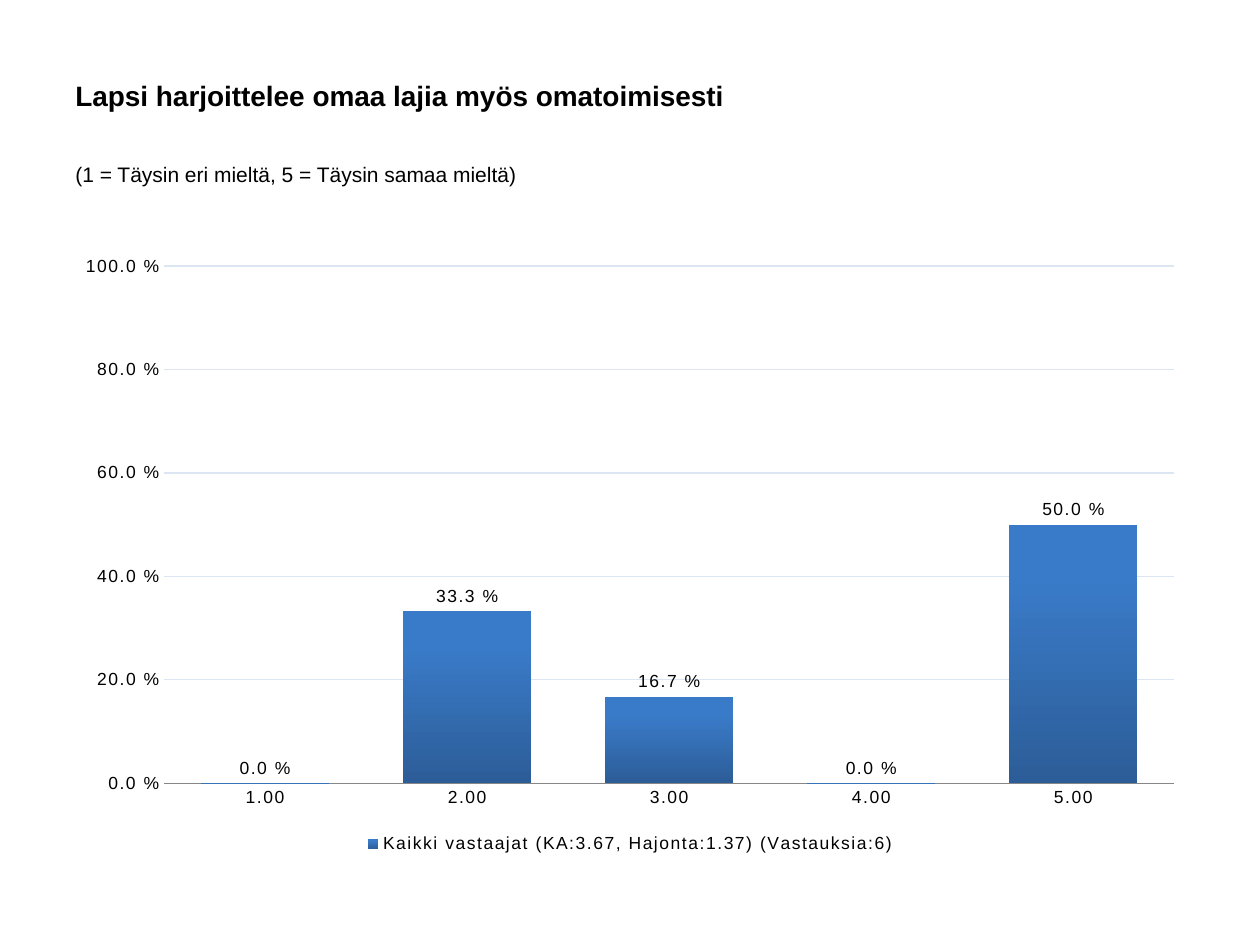
from lxml import etree
from pptx import Presentation, util as u
from pptx.chart.data import CategoryChartData
from pptx.dml.color import RGBColor
from pptx.enum import chart as ch, text
from pptx.oxml.ns import qn

PX = 914400 // 126
FONT = "Arial"
PERCENT = "0.0\\ %"
COLORS = {"text": "000000", "grid": "DCE6F2", "axis": "878787",
          "bar_bottom": "2C5D98", "bar_top": "3A7BC9"}


def px(n):
    return u.Emu(n * PX)


def rgb(name):
    return RGBColor.from_string(COLORS[name])


def set_font(font, size, bold=False):
    font.name, font.size, font.bold = FONT, u.Pt(size), bold
    font.color.rgb = rgb("text")


def add_text(s, box, words, size, bold=False, anchor=text.MSO_ANCHOR.TOP):
    tf = s.shapes.add_textbox(*map(px, box)).text_frame
    tf.word_wrap = True
    tf.vertical_anchor = anchor
    p = tf.paragraphs[0]
    p.text = words
    set_font(p.font, size, bold)
    return p


def set_plot_layout(chart, **fractions):
    """Fix the inner plot area as fractions of the chart box."""
    area = chart._chartSpace.chart.plotArea
    layout = area.find(qn("c:layout"))
    if layout is None:
        layout = etree.Element(qn("c:layout"))
        area.insert(0, layout)
    manual = etree.SubElement(layout, qn("c:manualLayout"))
    values = {"layoutTarget": "inner", "xMode": "edge", "yMode": "edge", **fractions}
    for tag, value in values.items():
        etree.SubElement(manual, qn(f"c:{tag}")).set("val", str(value))


def add_heading(s, x, y, w):
    add_text(s, (x, y, w, 100), "Lapsi harjoittelee omaa lajia myös omatoimisesti",
             16, True, text.MSO_ANCHOR.MIDDLE)
    p = add_text(s, (x, y + 110, w, 74),
                 "(1 = Täysin eri mieltä, 5 = Täysin samaa mieltä)", 12)
    p.space_before = u.Pt(2.4)


def add_answer_chart(s, x, y, w, h):
    data = CategoryChartData(number_format=PERCENT)
    data.categories = ["1.00", "2.00", "3.00", "4.00", "5.00"]
    data.add_series("Kaikki vastaajat (KA:3.67, Hajonta:1.37) (Vastauksia:6)",
                    [0, 0.333, 0.167, 0, 0.5])
    chart = s.shapes.add_chart(ch.XL_CHART_TYPE.COLUMN_CLUSTERED,
                               px(x), px(y), px(w), px(h), data).chart
    chart.has_title = False
    set_font(chart.font, 10)
    set_plot_layout(chart, x=round(101 / w, 3), y=round(22 / h, 3),
                    w=round(1010 / w, 3), h=round(517 / h, 3))

    # Legend
    chart.has_legend = True
    legend = chart.legend
    legend.position = ch.XL_LEGEND_POSITION.BOTTOM
    legend.include_in_layout = False
    set_font(legend.font, 10)

    # Axes
    cat, val = chart.category_axis, chart.value_axis
    for axis in (cat, val):
        axis.major_tick_mark = axis.minor_tick_mark = ch.XL_TICK_MARK.NONE
        set_font(axis.tick_labels.font, 10)
    cat.format.line.color.rgb = rgb("axis")
    cat.format.line.width = u.Pt(0.75)
    val.minimum_scale, val.maximum_scale, val.major_unit = 0, 1, 0.2
    val.tick_labels.number_format = PERCENT
    val.tick_labels.number_format_is_linked = False
    val.format.line.fill.background()
    grid = val.major_gridlines.format.line
    grid.color.rgb = rgb("grid")
    grid.width = u.Pt(0.75)

    # Columns and their labels
    plot = chart.plots[0]
    plot.gap_width = 58
    plot.vary_by_categories = False
    fill = plot.series[0].format.fill
    fill.gradient()
    fill.gradient_angle = 90
    for stop, name, position in zip(fill.gradient_stops, ("bar_bottom", "bar_top"), (0, 0.8)):
        stop.color.rgb = rgb(name)
        stop.position = position
    labels = plot.series[0].data_labels
    labels.show_value = True
    labels.position = ch.XL_LABEL_POSITION.OUTSIDE_END
    labels.number_format = PERCENT
    labels.number_format_is_linked = False
    set_font(labels.font, 10)

    # Wide letter spacing on all chart text
    for props in chart._chartSpace.iter(qn("a:defRPr")):
        props.set("spc", "100")


def main():
    prs = Presentation()
    prs.slide_width, prs.slide_height = u.Inches(10), u.Inches(7.5)
    s = prs.slides.add_slide(prs.slide_layouts[6])
    add_heading(s, 63, 45, 1134)
    add_answer_chart(s, 63, 244, 1134, 615)
    prs.save("out.pptx")


if __name__ == "__main__":
    main()
